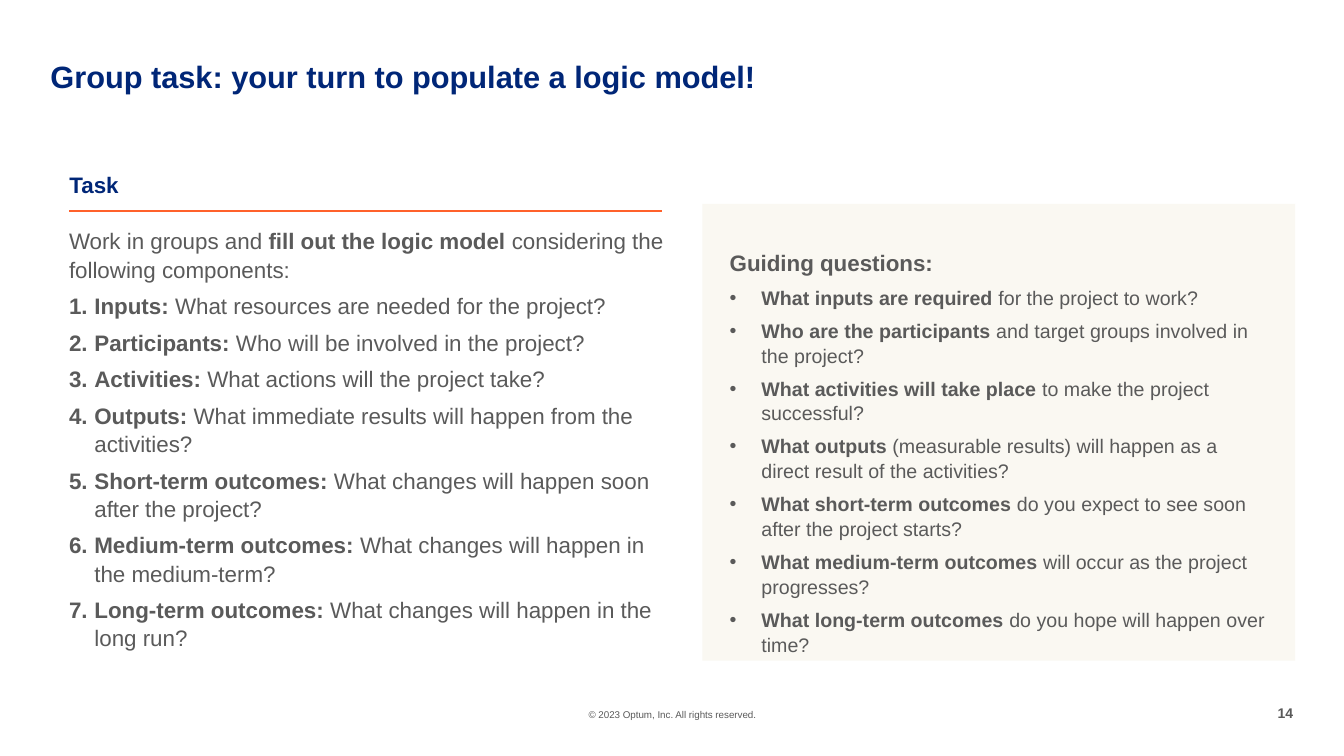
"""Build the group task slide: a numbered logic model task beside a panel of guiding questions."""
from dataclasses import dataclass

import pptx
import pptx.dml.color
import pptx.enum.shapes
import pptx.enum.text
import pptx.util
from lxml import etree
from pptx.util import Cm


@dataclass(frozen=True)
class Theme:
    font: str = "Arial"
    navy: str = "002677"
    grey: str = "5A5A5A"
    orange: str = "FF612B"
    cream: str = "FAF8F2"
    title: int = 22
    body: int = 16
    question: int = 14
    number: int = 10
    footer: int = 7


theme = Theme()
rgb = pptx.dml.color.RGBColor.from_string
align = pptx.enum.text.PP_ALIGN


def set_frame(box, wrap=True):
    frame = box.text_frame
    frame.margin_left = frame.margin_top = frame.margin_right = frame.margin_bottom = 0
    frame.vertical_anchor = pptx.enum.text.MSO_ANCHOR.TOP
    frame.auto_size = pptx.enum.text.MSO_AUTO_SIZE.NONE
    frame.word_wrap = wrap
    return frame


def write(para, spans, size, color=theme.grey, spacing=1.05, before=0, marker=None, indent=0):
    para.line_spacing = spacing
    para.space_before = pptx.util.Pt(before)
    if marker:
        properties = para._p.get_or_add_pPr()
        properties.set("marL", str(Cm(indent)))
        properties.set("indent", str(-Cm(indent)))
        tag, attributes = marker
        for name, values in (("buFont", {"typeface": theme.font}), (tag, attributes)):
            etree.SubElement(properties, pptx.oxml.ns.qn(f"a:{name}"), values)
    para.font.name = theme.font
    para.font.size = pptx.util.Pt(size)
    para.font.color.rgb = rgb(color)
    for text, bold in spans:
        span = para.add_run()
        span.text = text
        span.font.bold = bold


deck = pptx.Presentation()
deck.slide_width, deck.slide_height = Cm(33.87), Cm(19.05)
page = deck.slides.add_slide(deck.slide_layouts[5])

title = page.shapes.title
title.left, title.top, title.width, title.height = Cm(1.27), Cm(1.55), Cm(26.67), Cm(0.84)
para = set_frame(title).paragraphs[0]
para.alignment = align.LEFT
write(para, [("Group task: your turn to populate a logic model!", True)],
      theme.title, theme.navy, spacing=0.9)

heading = page.shapes.add_textbox(Cm(1.75), Cm(4.27), Cm(6.07), Cm(0.69))
write(set_frame(heading).paragraphs[0], [("Task", True)], theme.body, theme.navy)

rule = page.shapes.add_connector(
    pptx.enum.shapes.MSO_CONNECTOR.STRAIGHT, Cm(1.75), Cm(5.31), Cm(16.69), Cm(5.31))
rule.line.color.rgb = rgb(theme.orange)
rule.line.width = pptx.util.Pt(1.5)
etree.SubElement(rule._element.spPr, pptx.oxml.ns.qn("a:effectLst"))

components = [
    ("Inputs: ", "What resources are needed for the project?"),
    ("Participants: ", "Who will be involved in the project?"),
    ("Activities: ", "What actions will the project take?"),
    ("Outputs: ", "What immediate results will happen from the activities?"),
    ("Short-term outcomes: ", "What changes will happen soon after the project?"),
    ("Medium-term outcomes: ", "What changes will happen in the medium-term?"),
    ("Long-term outcomes: ", "What changes will happen in the long run?"),
]
task = set_frame(page.shapes.add_textbox(Cm(1.74), Cm(5.7), Cm(15.21), Cm(10.39)))
write(task.paragraphs[0], [
    ("Work in groups and ", False),
    ("fill out the logic model ", True),
    ("considering the following components:", False),
], theme.body)
for label, question in components:
    write(task.add_paragraph(), [(label, True), (question, False)], theme.body,
          before=6, marker=("buAutoNum", {"type": "arabicPeriod"}), indent=0.64)

panel = page.shapes.add_shape(
    pptx.enum.shapes.MSO_SHAPE.RECTANGLE, Cm(17.7), Cm(5.14), Cm(14.94), Cm(11.51))
panel.shadow.inherit = False
panel.fill.solid()
panel.fill.fore_color.rgb = rgb(theme.cream)
panel.line.fill.background()

questions = [
    ("What inputs are required ", "for the project to work?"),
    ("Who are the participants ", "and target groups involved in the project?"),
    ("What activities will take place ", "to make the project successful?"),
    ("What outputs ", "(measurable results) will happen as a direct result of the activities?"),
    ("What short-term outcomes ", "do you expect to see soon after the project starts?"),
    ("What medium-term outcomes ", "will occur as the project progresses?"),
    ("What long-term outcomes ", "do you hope will happen over time?"),
]
guide = set_frame(page.shapes.add_textbox(Cm(18.39), Cm(6.25), Cm(13.65), Cm(10.69)))
write(guide.paragraphs[0], [("Guiding questions:", True)], theme.body)
for topic, rest in questions:
    write(guide.add_paragraph(), [(topic, True), (rest, False)], theme.question,
          before=6, marker=("buChar", {"char": "•"}), indent=0.8)

footer = page.shapes.add_textbox(Cm(13.06), Cm(17.86), Cm(7.77), Cm(0.3))
para = set_frame(footer).paragraphs[0]
para.alignment = align.CENTER
write(para, [("© 2023 Optum, Inc. All rights reserved.", False)], theme.footer, spacing=1.0)

number = page.shapes.add_textbox(Cm(32.16), Cm(17.75), Cm(0.43), Cm(0.43))
para = set_frame(number, wrap=False).paragraphs[0]
para.alignment = align.RIGHT
write(para, [("14", True)], theme.number, spacing=1.0)

deck.save("out.pptx")
